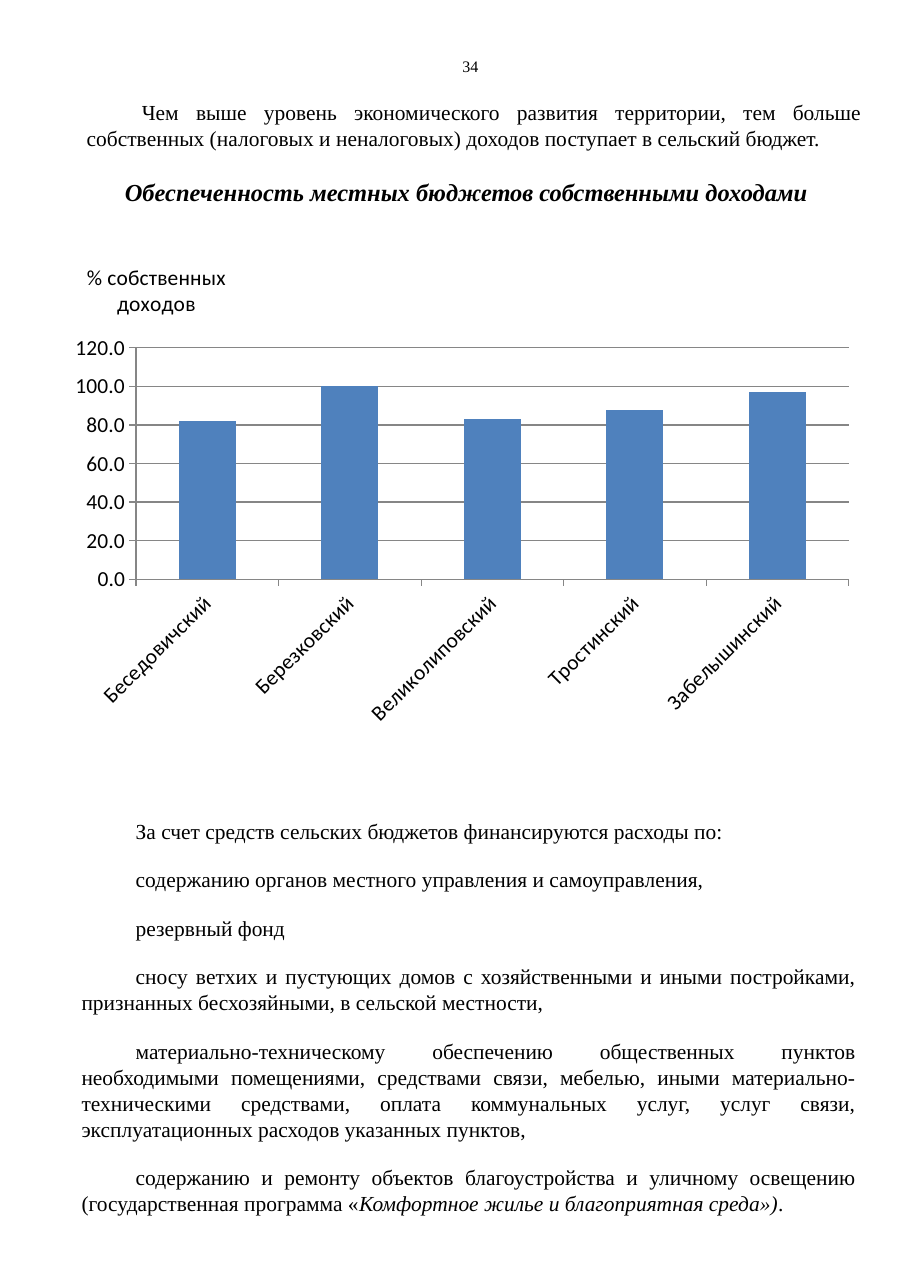
from lxml import etree
from pptx import Presentation
from pptx import util as u
from pptx.chart.data import CategoryChartData
from pptx.dml.color import RGBColor
from pptx.enum import chart as ch, text
from pptx.oxml.ns import qn

SERIF = "Times New Roman"
SANS = "Calibri"
INK, BAR, GRID = "000000", "4F81BD", "868686"
ALIGN = text.PP_ALIGN

VALUES = {
    "Беседовичский": 82,
    "Березковский": 100,
    "Великолиповский": 83,
    "Тростинский": 88,
    "Забелышинский": 97,
}
INTRO = ("Чем выше уровень экономического развития территории, тем больше собственных "
         "(налоговых и неналоговых) доходов поступает в сельский бюджет.")
COSTS = [
    "За счет средств сельских бюджетов финансируются расходы по:",
    "содержанию органов местного управления и самоуправления,",
    "резервный фонд",
    "сносу ветхих и пустующих домов с хозяйственными и иными постройками, "
    "признанных бесхозяйными, в сельской местности,",
    "материально-техническому обеспечению общественных пунктов необходимыми "
    "помещениями, средствами связи, мебелью, иными материально-техническими "
    "средствами, оплата коммунальных услуг, услуг связи, эксплуатационных "
    "расходов указанных пунктов,",
    "содержанию и ремонту объектов благоустройства и уличному освещению "
    "(государственная программа «",
]
PROGRAM = "Комфортное жилье и благоприятная среда»)"


def color(code):
    return RGBColor.from_string(code)


def style(font, size, name=SERIF, bold=False, italic=False):
    font.name, font.size = name, u.Pt(size)
    font.bold, font.italic = bold, italic
    font.color.rgb = color(INK)


def frame(shape, wrap=True):
    body = shape.text_frame
    body.margin_left = body.margin_right = body.margin_top = body.margin_bottom = 0
    body.word_wrap = wrap
    body.auto_size = text.MSO_AUTO_SIZE.NONE
    body.vertical_anchor = text.MSO_ANCHOR.TOP
    return body


def add_number(slide, box):
    body = frame(slide.shapes.add_textbox(*box), wrap=False)
    body.text = "34"
    style(body.paragraphs[0].runs[0].font, 10.5)


def add_heading(slide, box):
    title = slide.shapes.title
    title.left, title.top, title.width, title.height = box
    body = frame(title)
    body.text = "Обеспеченность местных бюджетов собственными доходами"
    para = body.paragraphs[0]
    para.alignment = ALIGN.CENTER
    style(para.runs[0].font, 16, bold=True, italic=True)


def add_prose(slide, box, lines, pitch, after, indent):
    """Justified paragraphs with an indented first line."""
    body = frame(slide.shapes.add_textbox(*box))
    body.text = "\n".join(lines)
    for para in body.paragraphs:
        para.alignment = ALIGN.JUSTIFY
        para.line_spacing, para.space_after = u.Pt(pitch), u.Pt(after)
        props = para._p.get_or_add_pPr()
        props.set("marL", "0")
        props.set("indent", str(indent))
        for run in para.runs:
            style(run.font, 14)
    return body


def add_costs(slide, box):
    body = add_prose(slide, box, COSTS, 17, 14.7, u.Cm(1.25))
    for words, slant in ((PROGRAM, True), (".", False)):
        run = body.paragraphs[-1].add_run()
        run.text = words
        style(run.font, 14, italic=slant)


def place(owner, x, y, w=None, h=None):
    """Fix a chart part at fractions of the chart's size."""
    old = owner.find(qn("c:layout"))
    if old is not None:
        owner.remove(old)
    layout = etree.Element(qn("c:layout"))
    manual = etree.SubElement(layout, qn("c:manualLayout"))
    parts = [("xMode", "edge"), ("yMode", "edge"), ("x", x), ("y", y)]
    if w:
        parts = [("layoutTarget", "inner")] + parts + [("w", w), ("h", h)]
    for tag, val in parts:
        etree.SubElement(manual, qn("c:" + tag)).set("val", str(val))
    lead = owner.find(qn("c:tx"))
    owner.insert(0 if lead is None else 1, layout)


def add_bars(slide, box):
    data = CategoryChartData(number_format="#,##0.0")
    data.categories = list(VALUES)
    data.add_series("% собственных доходов", list(VALUES.values()))
    chart = slide.shapes.add_chart(ch.XL_CHART_TYPE.COLUMN_CLUSTERED, *box, data).chart
    chart.has_legend = False
    style(chart.font, 18, SANS)

    # Title at the top left
    chart.has_title = True
    body = chart.chart_title.text_frame
    body.text = "% собственных\nдоходов"
    for para in body.paragraphs:
        para.alignment = ALIGN.CENTER
        style(para.runs[0].font, 14, SANS)
    chart.chart_title.include_in_layout = False
    place(chart.chart_title._element, 0.03, 0.03)
    place(chart._chartSpace.chart.plotArea, 0.095, 0.21, 0.885, 0.47)

    # Columns
    plot = chart.plots[0]
    plot.gap_width, plot.vary_by_categories = 150, False
    fill = plot.series[0].format.fill
    fill.solid()
    fill.fore_color.rgb = color(BAR)

    # Axes
    cats, vals = chart.category_axis, chart.value_axis
    vals.minimum_scale, vals.maximum_scale, vals.major_unit = 0, 120, 20
    vals.has_major_gridlines = True
    for axis in (cats, vals):
        axis.major_tick_mark = ch.XL_TICK_MARK.OUTSIDE
        style(axis.tick_labels.font, 14, SANS)
    for item in (cats, vals, vals.major_gridlines):
        item.format.line.color.rgb = color(GRID)
        item.format.line.width = u.Pt(0.75)
    vals.tick_labels.number_format = "#,##0.0"
    vals.tick_labels.number_format_is_linked = False
    cats._element.find(qn("c:txPr")).find(qn("a:bodyPr")).set("rot", "-2700000")


def cm(*sizes):
    return [u.Cm(size) for size in sizes]


def main():
    deck = Presentation()
    deck.slide_width, deck.slide_height = cm(21, 29.7)
    slide = deck.slides.add_slide(deck.slide_layouts[5])
    add_number(slide, cm(10.66, 1.3, 0.48, 0.38))
    add_prose(slide, cm(2, 2.26, 17.86, 1.78), [INTRO], 17.3, 12.6, u.Cm(1.27))
    add_heading(slide, cm(2, 4.09, 17.5, 0.76))
    add_bars(slide, cm(1.37, 5.64, 18.57, 11.35))
    add_costs(slide, cm(1.88, 18.85, 17.85, 9.2))
    deck.save("out.pptx")


if __name__ == "__main__":
    main()
